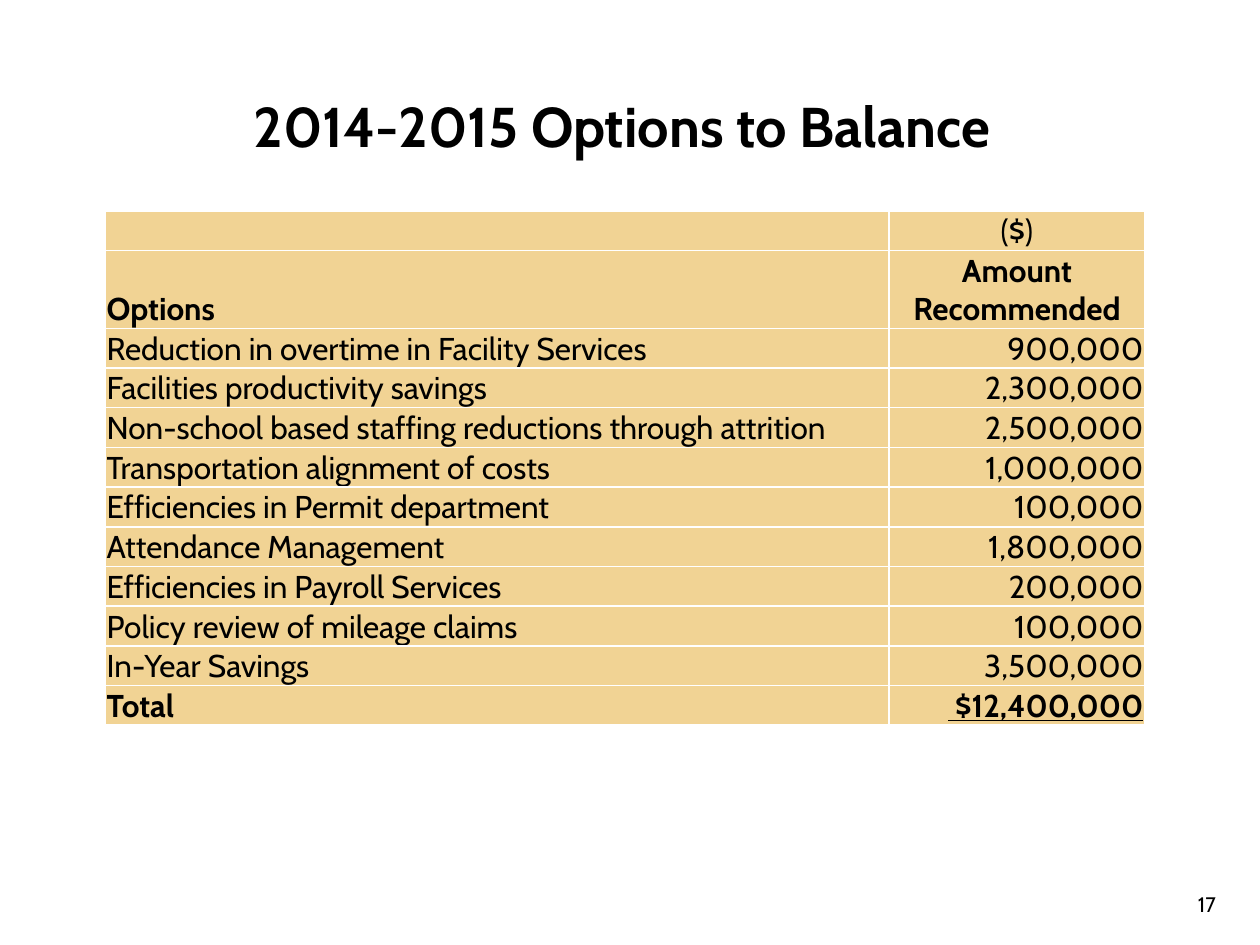
import pptx
import pptx.dml.color
import pptx.enum.text
import pptx.oxml
import pptx.oxml.ns
import pptx.util
from pptx.util import Cm

ALIGN = pptx.enum.text.PP_ALIGN
ANCHOR = pptx.enum.text.MSO_ANCHOR
FONT = "Cabin"
BLACK, WHITE, SAND = "000000", "FFFFFF", "F1D394"

OPTIONS = [
    ("Reduction in overtime in Facility Services", "900,000"),
    ("Facilities productivity savings", "2,300,000"),
    ("Non-school based staffing reductions through attrition", "2,500,000"),
    ("Transportation alignment of costs", "1,000,000"),
    ("Efficiencies in Permit department", "100,000"),
    ("Attendance Management", "1,800,000"),
    ("Efficiencies in Payroll Services", "200,000"),
    ("Policy review of mileage claims", "100,000"),
    ("In-Year Savings", "3,500,000"),
]
ROWS = [("", "($)"), ("Options", "Amount Recommended"), *OPTIONS, ("Total", " $12,400,000")]
HEADER_ROWS = 2
LABEL_ROW, TOTAL_ROW = 1, len(ROWS) - 1


def color(value):
    return pptx.dml.color.RGBColor.from_string(value)


def write(frame, text, size, align, bold=False, underline=False):
    """Fill a text frame with one formatted paragraph."""
    frame.word_wrap = True
    para = frame.paragraphs[0]
    para.text = text
    para.alignment = align
    for span in para.runs:
        span.font.name = FONT
        span.font.size = pptx.util.Pt(size)
        span.font.bold = bold
        span.font.underline = underline
        span.font.color.rgb = color(BLACK)


def add_text(page, area, text, size, align, anchor, bold=False):
    box = page.shapes.add_textbox(*map(Cm, area))
    box.text_frame.vertical_anchor = anchor
    write(box.text_frame, text, size, align, bold)
    return box


def add_borders(cell, value, points):
    """Draw all four cell borders, ahead of the fill as the schema requires."""
    properties = cell._tc.get_or_add_tcPr()
    for index, side in enumerate(("lnL", "lnR", "lnT", "lnB")):
        line = pptx.oxml.parse_xml(
            f'<a:{side} {pptx.oxml.ns.nsdecls("a")} w="{pptx.util.Pt(points)}">'
            f'<a:solidFill><a:srgbClr val="{value}"/></a:solidFill></a:{side}>'
        )
        properties.insert(index, line)


def add_options_table(page, area):
    left, top, width, height = area
    table = page.shapes.add_table(len(ROWS), 2, *map(Cm, area)).table

    # Column widths and row heights: the label row holds two lines
    amount_width, row_height = 5.16, 0.8
    table.columns[0].width = Cm(width - amount_width)
    table.columns[1].width = Cm(amount_width)
    for row in table.rows:
        row.height = Cm(row_height)
    table.rows[LABEL_ROW].height = Cm(height - row_height * (len(ROWS) - 1))

    # Cells
    for r, texts in enumerate(ROWS):
        for c, text in enumerate(texts):
            cell = table.cell(r, c)
            cell.fill.solid()
            cell.fill.fore_color.rgb = color(SAND)
            cell.margin_left = cell.margin_right = cell.margin_top = Cm(0.03)
            cell.margin_bottom = 0
            cell.vertical_anchor = ANCHOR.BOTTOM
            if c == 0:
                align = ALIGN.LEFT
            else:
                align = ALIGN.CENTER if r < HEADER_ROWS else ALIGN.RIGHT
            write(cell.text_frame, text, 18, align,
                  bold=r in (LABEL_ROW, TOTAL_ROW),
                  underline=r == TOTAL_ROW and c == 1)
            add_borders(cell, WHITE, 1)


def add_page_number(page, area):
    box = add_text(page, area, "17", 12, ALIGN.RIGHT, ANCHOR.BOTTOM)
    box.text_frame.margin_bottom = 0


def main():
    deck = pptx.Presentation()
    deck.slide_width, deck.slide_height = Cm(25.4), Cm(19.05)
    page = deck.slides.add_slide(deck.slide_layouts[6])
    page.background.fill.solid()
    page.background.fill.fore_color.rgb = color(WHITE)

    add_page_number(page, (21.79, 17.58, 2.97, 0.91))
    add_text(page, (1.07, 1.07, 22.94, 2.9), "2014-2015 Options to Balance",
             32, ALIGN.CENTER, ANCHOR.MIDDLE, bold=True)
    add_options_table(page, (2.12, 4.25, 20.96, 10.37))
    deck.save("out.pptx")


if __name__ == "__main__":
    main()
